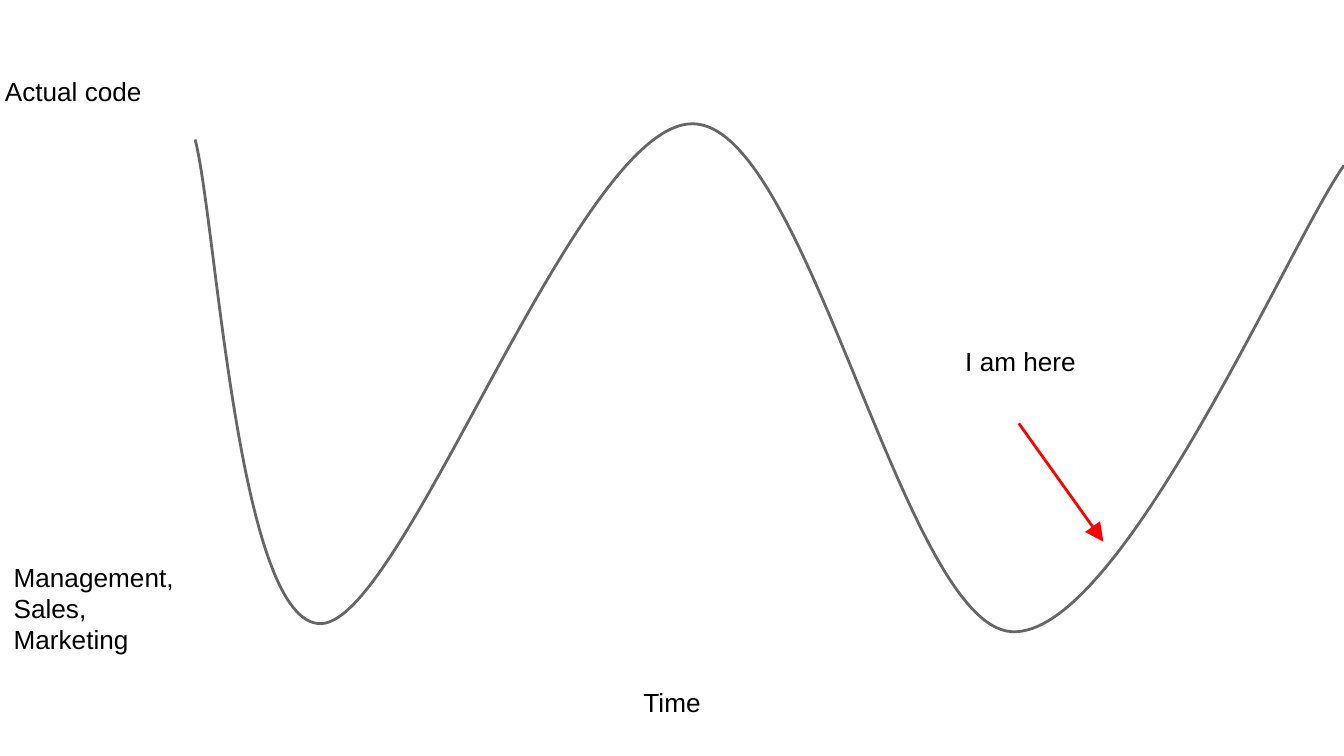
from lxml import etree
from pptx import Presentation
from pptx.dml.color import RGBColor
from pptx.enum import shapes, text
from pptx.oxml.ns import qn
from pptx.util import Pt

COLORS = {"text": "000000", "curve": "666666", "arrow": "FF0000"}
FONT = "Arial"
LINE_WIDTH = 1.5

CURVE_START = (104.5, 74.7)
# Each segment: two control points and an end point
CURVE_SEGMENTS = [
    ((115.9, 118.1), (127.4, 335.5), (172.1, 334.1)),
    ((216.7, 332.6), (309.6, 65.5), (371.2, 66.3)),
    ((432.7, 67), (483.8, 334.8), (541.9, 338.4)),
    ((599.8, 342), (690.5, 130.3), (720, 88.6)),
]

LABELS = [
    (["Time"], (117.4, 360.7, 485.3, 28.8), text.PP_ALIGN.CENTER),
    (["Management,", "Sales,", "Marketing"], (0.2, 293.4, 212.4, 104.4), text.PP_ALIGN.LEFT),
    (["Actual code"], (-4.5, 33.1, 212.4, 104.4), text.PP_ALIGN.LEFT),
    (["I am here"], (510, 177.8, 87.8, 41), text.PP_ALIGN.LEFT),
]


def style_line(line, color):
    line.color.rgb = RGBColor.from_string(COLORS[color])
    line.width = Pt(LINE_WIDTH)


def add_curve(page, start, segments):
    """Draw a chain of cubic Beziers whose end points span its bounds."""
    builder = page.shapes.build_freeform(*map(Pt, start))
    ends = [tuple(map(Pt, segment[-1])) for segment in segments]
    builder.add_line_segments(ends, close=False)
    curve = builder.convert_to_shape()
    straights = list(curve._element.iter(qn("a:lnTo")))
    for straight, segment in zip(straights, segments):
        straight.clear()
        bend = etree.Element(qn("a:cubicBezTo"))
        for x, y in segment:
            etree.SubElement(
                bend, qn("a:pt"), x=str(Pt(x) - curve.left), y=str(Pt(y) - curve.top)
            )
        straight.getparent().replace(straight, bend)
    curve.shadow.inherit = False
    curve.fill.background()
    style_line(curve.line, "curve")


def add_label(page, lines, place, align):
    box = page.shapes.add_textbox(*map(Pt, place))
    frame = box.text_frame
    frame.word_wrap = True
    frame.margin_left = frame.margin_right = Pt(7.2)
    frame.margin_top = frame.margin_bottom = Pt(7.2)
    frame.text = "\n".join(lines)
    for para in frame.paragraphs:
        para.alignment = align
        para.font.name = FONT
        para.font.size = Pt(14)
        para.font.color.rgb = RGBColor.from_string(COLORS["text"])


def add_arrow(page, start, end):
    arrow = page.shapes.add_connector(
        shapes.MSO_CONNECTOR.STRAIGHT, *map(Pt, start + end)
    )
    style_line(arrow.line, "arrow")
    outline = arrow.line._get_or_add_ln()
    etree.SubElement(outline, qn("a:tailEnd"), type="triangle", w="lg", len="lg")
    etree.SubElement(arrow._element.spPr, qn("a:effectLst"))


def main():
    deck = Presentation()
    deck.slide_width, deck.slide_height = Pt(720), Pt(405)
    page = deck.slides.add_slide(deck.slide_layouts[6])
    add_curve(page, CURVE_START, CURVE_SEGMENTS)
    for lines, place, align in LABELS:
        add_label(page, lines, place, align)
    add_arrow(page, (545.8, 226.8), (591.1, 290.2))
    deck.save("out.pptx")


if __name__ == "__main__":
    main()
